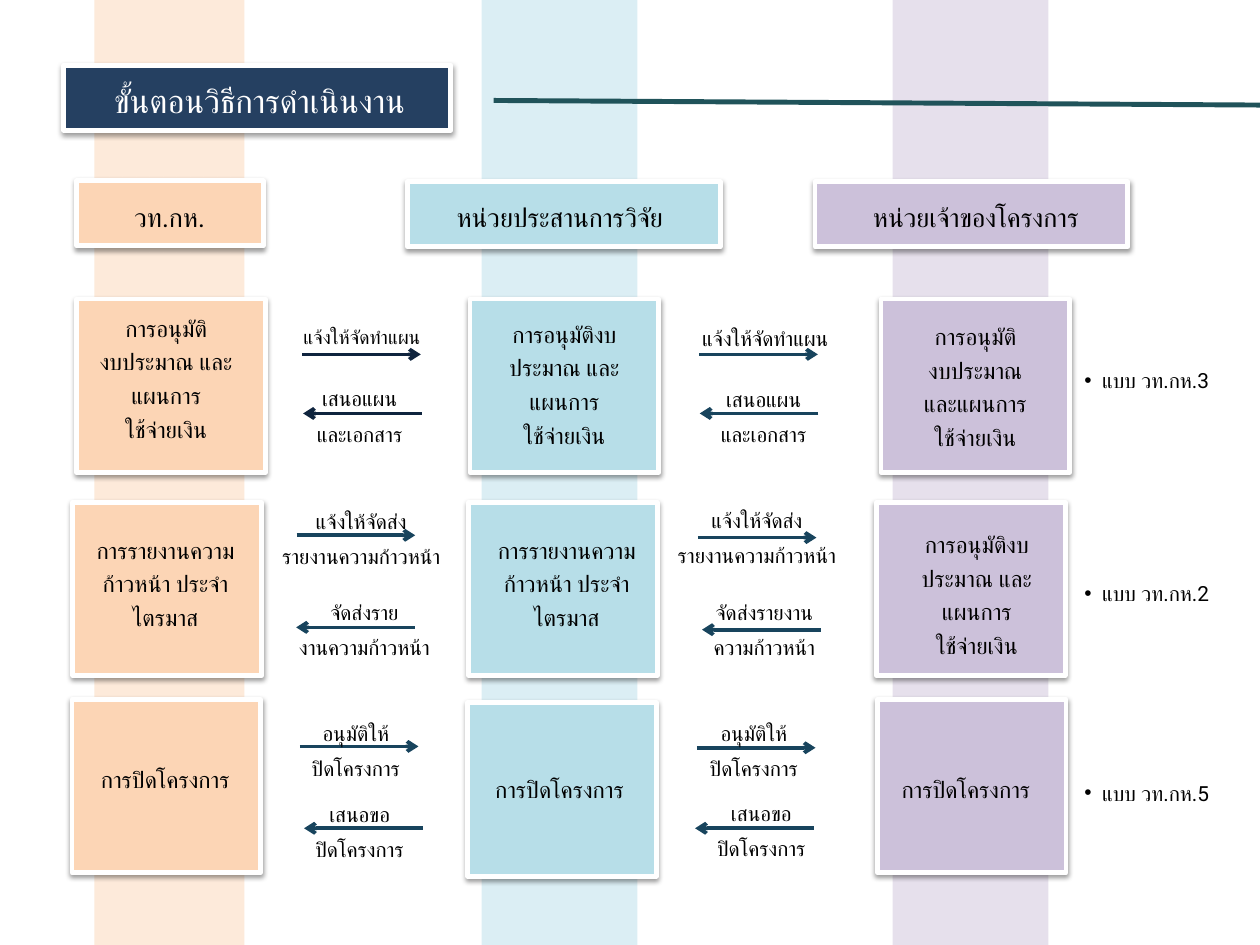
from itertools import cycle
from lxml.etree import SubElement as Sub
from pptx import Presentation
from pptx.dml.color import RGBColor
from pptx.enum.shapes import MSO_CONNECTOR as Link, MSO_SHAPE as Form
from pptx.enum.text import MSO_ANCHOR as Anchor, MSO_AUTO_SIZE as Fit, PP_ALIGN as Align
from pptx.oxml.ns import qn
from pptx.util import Cm, Pt

FACE = "Roboto"
STEP = 2.55
WIDE, TALL = 27.1, 20.32
PEACH, AQUA, LILAC = "FCD5B5", "B7DEE8", "CCC1DA"
NAVY, TEAL, INK = "254061", "18445D", "0F243E"
BUDGET = ["การอนุมัติงบประมาณ และแผนการ", "ใช้จ่ายเงิน"]
REPORT = ["การรายงานความก้าวหน้า ประจำไตรมาส"]
CLOSE = ["การปิดโครงการ"]
PLAN = ["แจ้งให้จัดทำแผน"]
OFFER = ["เสนอแผน", "และเอกสาร"]
ASK = ["แจ้งให้จัดส่ง", "รายงานความก้าวหน้า"]
ALLOW = ["อนุมัติให้", "ปิดโครงการ"]
SEEK = ["เสนอขอ", "ปิดโครงการ"]

BANDS = [(2.03, 3.23, "FDEADA"), (10.36, 3.35, "DBEEF4"), (19.2, 3.35, "E6E0EC")]
HEADS = [
    ((1.65, 3.89, 4.01, 1.4), (2, 4.22, 3.3), PEACH, ["วท.กห."]),
    ((8.76, 3.91, 6.73, 1.4), (9.24, 4.22, 5.6), AQUA, ["หน่วยประสานการวิจัย"]),
    ((17.53, 3.91, 6.73, 1.4), (18.19, 4.22, 5.6), LILAC, ["หน่วยเจ้าของโครงการ"]),
]
CARDS = [
    (1.65, 6.43, (1.85, 6.63, 3.45), PEACH,
     ["การอนุมัติ", "งบประมาณ และแผนการ", "ใช้จ่ายเงิน"]),
    (10.11, 6.43, (10.31, 6.76, 3.66), AQUA, BUDGET),
    (18.95, 6.43, (18.95, 6.81, 4.06), LILAC,
     ["การอนุมัติ", "งบประมาณ", "และแผนการ", "ใช้จ่ายเงิน"]),
    (1.57, 10.8, (1.73, 11.4, 3.66), PEACH, REPORT),
    (10.08, 10.8, (10.36, 11.4, 3.66), AQUA, REPORT),
    (18.85, 10.8, (19.18, 11.28, 3.66), LILAC, BUDGET),
    (1.55, 15.04, (1.88, 16.33, 3.35), PEACH, CLOSE),
    (10.06, 15.11, (10.36, 16.54, 3.35), AQUA, CLOSE),
    (18.87, 15.04, (19.1, 16.54, 3.35), LILAC, CLOSE),
]
FLOWS = [
    ((6.5, 7.62), (6.4, 6.91, 2.77), PLAN, INK, 11.7),
    ((9.07, 8.89), (6.68, 8.08, 2.11), OFFER, INK, 12.7),
    ((6.38, 11.51), (5.84, 10.72, 3.86), ASK, TEAL, 12.7),
    ((8.92, 13.49), (6.25, 12.67, 3.18), ["จัดส่งราย", "งานความก้าวหน้า"], TEAL, 12.7),
    ((6.45, 16.05), (6.6, 15.27, 2.11), ALLOW, TEAL, 12.7),
    ((9.09, 17.81), (6.68, 17.02, 2.11), SEEK, TEAL, 12.7),
    ((15.04, 7.62), (14.96, 6.91, 3), PLAN, TEAL, 12.7),
    ((17.6, 8.89), (15.37, 8.1, 2.11), OFFER, TEAL, 12.7),
    ((15.01, 11.56), (14.35, 10.69, 3.86), ASK, TEAL, 12.7),
    ((17.65, 13.54), (15.21, 12.67, 2.46), ["จัดส่งรายงาน", "ความก้าวหน้า"], TEAL, 12.7),
    ((14.99, 16.08), (15.16, 15.27, 2.11), ALLOW, TEAL, 12.7),
    ((17.5, 17.81), (15.32, 16.99, 2.11), SEEK, TEAL, 12.7),
]
FORMS = [(7.82, "3"), (12.4, "2"), (16.69, "5")]


def tint(code):
    return RGBColor.from_string(code)


def put(item, vals):
    for key, val in vals.items():
        setattr(item, key, val)


def place(shape, at):
    put(shape, dict(zip(("left", "top", "width", "height"), map(Cm, at))))


def write(shape, lines, size, lead, hue="000000", pads=(0, 0, 0), wrap=True):
    frame = shape.text_frame
    left, top, right = map(Cm, pads)
    put(frame, {"margin_left": left, "margin_top": top, "margin_right": right,
                "margin_bottom": 0, "word_wrap": wrap, "auto_size": Fit.NONE,
                "vertical_anchor": Anchor.TOP})
    frame.text = "\n".join(lines)
    for para in frame.paragraphs:
        put(para, {"alignment": Align.CENTER, "line_spacing": Pt(lead),
                   "space_before": Pt(0)})
        for run in para.runs:
            run.font.color.rgb = tint(hue)
            put(run.font, {"size": Pt(size), "bold": False, "name": FACE})
            Sub(run.font._element, qn("a:cs"), typeface=FACE)


def paint(shape, fill):
    shape.shadow.inherit = False
    shape.fill.solid()
    shape.fill.fore_color.rgb = tint(fill)


def panel(shape, at, spot, fill, lines, size, lead, hue="000000"):
    place(shape, at)
    paint(shape, fill)
    shape.line.color.rgb = tint("FFFFFF")
    shape.line.width = Pt(3)
    glow = Sub(shape._element.spPr.find(qn("a:effectLst")), qn("a:outerShdw"),
               blurRad=str(Pt(3.1)), dist=str(Pt(1.6)), dir="5400000", rotWithShape="0")
    shade = Sub(glow, qn("a:srgbClr"), val="000000")
    Sub(shade, qn("a:alpha"), val="38000")
    x, y, wide = spot
    pads = x - at[0], y - at[1], at[0] + at[2] - x - wide
    write(shape, lines, size, lead, hue, pads)


def block(slide, at):
    return slide.shapes.add_shape(Form.RECTANGLE, *map(Cm, at))


def band(slide, x, wide, fill):
    shape = block(slide, (x, 0, wide, TALL))
    paint(shape, fill)
    shape.line.fill.background()


def stroke(slide, ends, hue, width, head=False):
    line = slide.shapes.add_connector(Link.STRAIGHT, *map(Cm, ends))
    line.line.color.rgb = tint(hue)
    line.line.width = Pt(width)
    props = line._element.spPr
    if head:
        Sub(props.find(qn("a:ln")), qn("a:tailEnd"), type="arrow")
    Sub(props, qn("a:effectLst"))


def label(slide, spot, lines, size):
    tall, lead = (1.47, 21.5) if len(lines) > 1 else (0.6, size * 1.4)
    box = slide.shapes.add_textbox(*map(Cm, (*spot, tall)))
    write(box, lines, size, round(lead, 1), wrap=False)


def bullet(shape, y, code):
    place(shape, (22.81, y, 3.33, 0.61))
    write(shape, [f"แบบ วท.กห.{code}"], 12.7, 17.7)
    props = shape.text_frame.paragraphs[0]._p.get_or_add_pPr()
    props.set("marL", str(Cm(0.76)))
    props.set("indent", str(Cm(-0.38)))
    Sub(props, qn("a:buChar"), char="•")


def main():
    deck = Presentation()
    put(deck, {"slide_width": Cm(WIDE), "slide_height": Cm(TALL)})
    slide = deck.slides.add_slide(deck.slide_layouts[4])
    title, *notes, spare = slide.placeholders
    spare._element.getparent().remove(spare._element)
    for item in BANDS:
        band(slide, *item)
    stroke(slide, (10.62, 2.16, WIDE, 2.26), "20535A", 3)
    slide.shapes._spTree.append(title._element)
    panel(title, (1.37, 1.4, 8.33, 1.4), (1.47, 1.7, 8.23), NAVY,
          ["ขั้นตอนวิธีการดำเนินงาน"], 20, 25.2, "FFFFFF")
    for at, spot, fill, lines in HEADS:
        panel(block(slide, at), at, spot, fill, lines, 16, 22.4)
    for x, y, spot, fill, lines in CARDS:
        at = x, y, 4.06, 3.73
        panel(block(slide, at), at, spot, fill, lines, 14, 20.5)
    for (start, spot, lines, hue, size), step in zip(FLOWS, cycle((STEP, -STEP))):
        x, y = start
        stroke(slide, (x, y, x + step, y), hue, 2.25, True)
        label(slide, spot, lines, size)
    for note, (y, code) in zip(notes, FORMS):
        bullet(note, y, code)
    deck.save("out.pptx")


if __name__ == "__main__":
    main()
